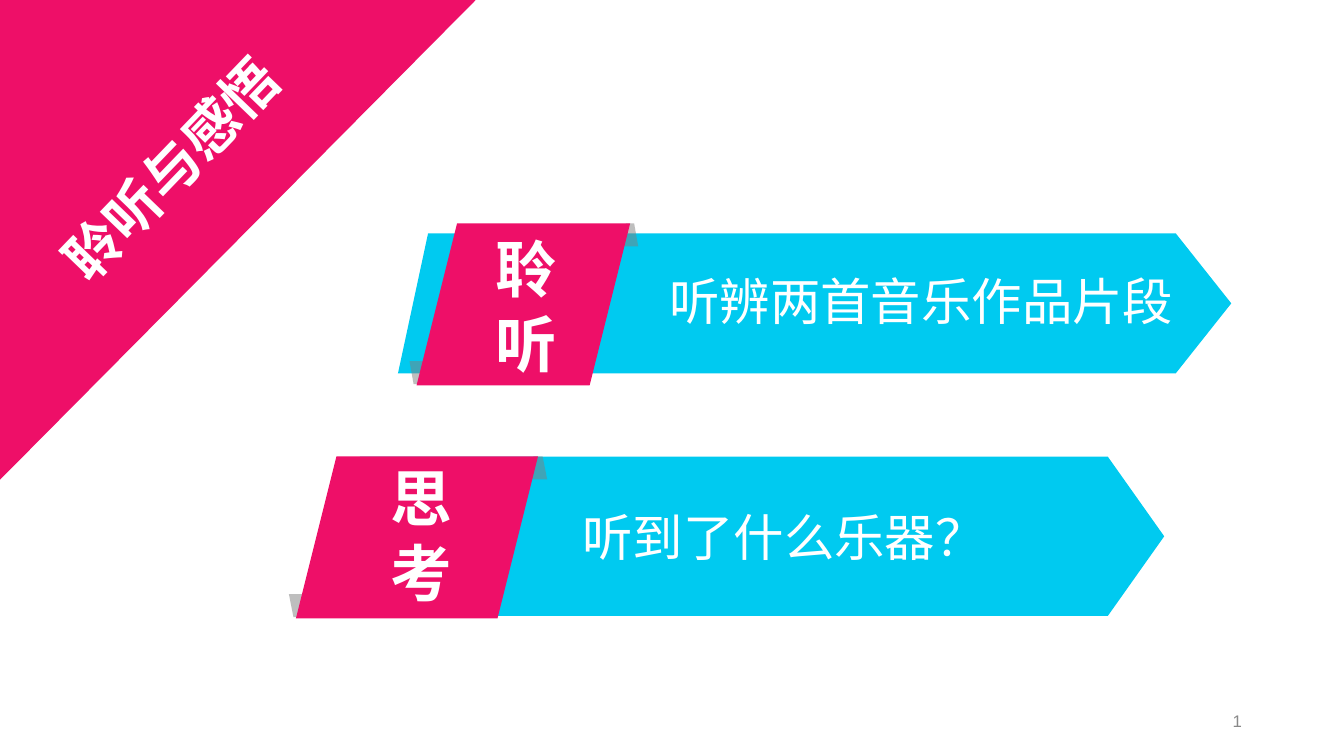
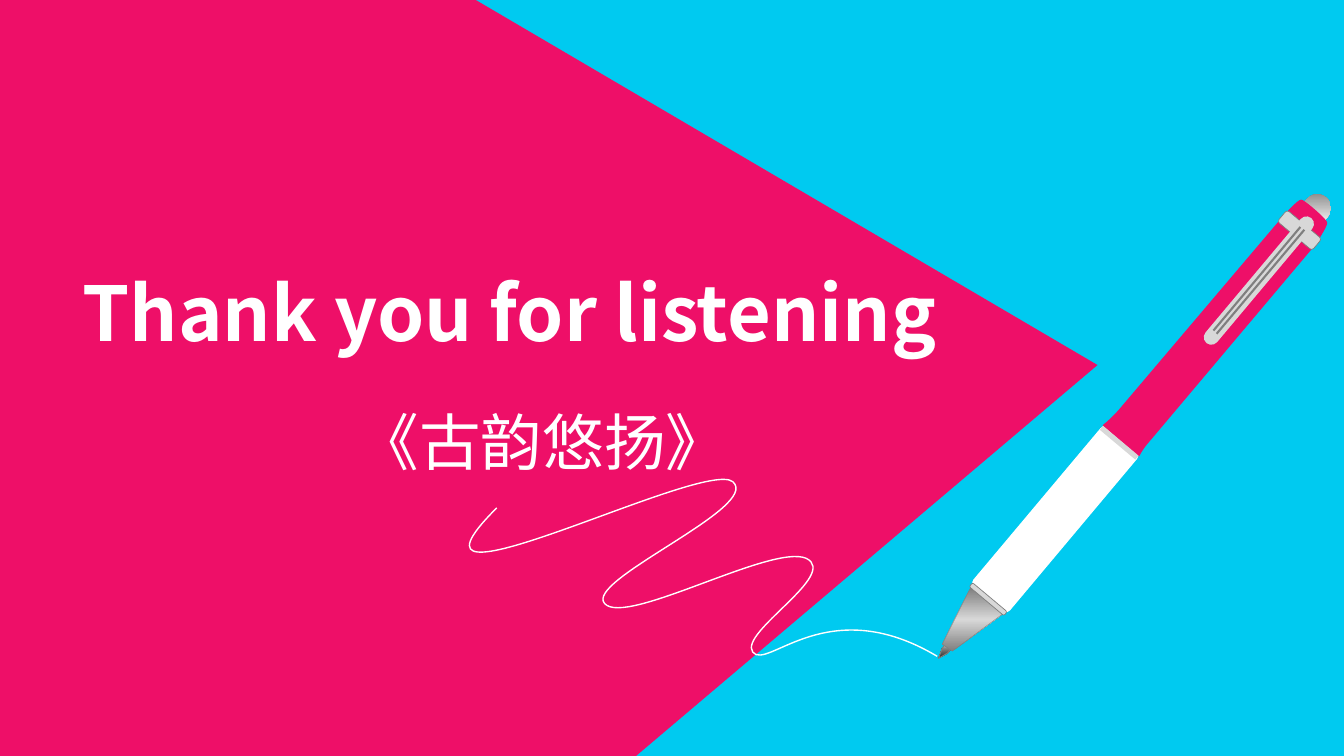
from dataclasses import dataclass

from lxml import etree
from pptx import Presentation
from pptx.dml.color import RGBColor
from pptx.enum.shapes import MSO_CONNECTOR, MSO_SHAPE
from pptx.enum.text import MSO_ANCHOR, MSO_AUTO_SIZE, PP_ALIGN
from pptx.oxml.ns import qn
from pptx.util import Cm, Pt

PINK, CYAN, WHITE = "EE0F68", "00CAF0", "FFFFFF"
GREY, LIGHT_GREY, NUMBER_GREY, BLACK = "7F7F7F", "D8D8D8", "898989", "262626"
CJK_FONT, LATIN_FONT = "Noto Sans CJK SC", "Arial"
WIDTH, HEIGHT = 33.87, 19.05
PEN_ANGLE = 310

Point = tuple[float, float]
Segment = tuple[Point, ...]  # one point: straight; three points: cubic curve
Stop = tuple[int, str]


@dataclass(frozen=True)
class Box:
    left: float
    top: float
    width: float
    height: float

    @property
    def right(self) -> float:
        return self.left + self.width

    @property
    def bottom(self) -> float:
        return self.top + self.height

    def lengths(self) -> tuple:
        return Cm(self.left), Cm(self.top), Cm(self.width), Cm(self.height)


@dataclass(frozen=True)
class Ribbon:
    label: str
    task: str
    tab: Box
    band: Box
    point_length: float
    fold_width: float
    label_box: Box
    task_box: Box


@dataclass(frozen=True)
class PenPart:
    box: Box
    rounding: float = 0
    fill: str = LIGHT_GREY
    line: str | None = None
    line_width: float = 0.5


RIBBONS = (
    Ribbon("聆听", "听辨两首音乐作品片段", Box(10.5, 5.63, 5.38, 4.08),
           Box(10.03, 5.88, 21, 3.53), 1.4, 0.41,
           Box(11.48, 5.67, 3.58, 4.01), Box(16.62, 6.67, 13.69, 1.8)),
    Ribbon("思考", "听到了什么乐器？", Box(7.46, 11.5, 6.1, 4.08),
           Box(8.31, 11.51, 21.03, 4.01), 1.42, 0.46,
           Box(8.84, 11.45, 3.58, 4.01), Box(14.43, 12.61, 16.1, 1.8)),
)

SCRIBBLE_START = (12.52, 12.8)
SCRIBBLE = (
    ((9.42, 15.88), (17.75, 11.53), (18.47, 12.14)),
    ((19.2, 12.78), (14.71, 14.63), (15.24, 15.21)),
    ((15.77, 15.8), (19.46, 13.69), (20.32, 14.07)),
    ((21.16, 14.48), (18.62, 15.93), (18.97, 16.43)),
    ((19.33, 16.92), (20.85, 14.88), (23.62, 16.54)),
)
BARREL_START = (32.79, 5.05)
BARREL = (
    ((32.84, 5.03), (33.43, 5.54), (33.43, 5.61)),
    ((33.45, 5.66), (33.25, 5.99), (33.1, 6.2)),
    ((29.01, 11.05),),
    ((28.83, 11.25), (28.75, 11.38), (28.7, 11.48)),
    ((27.81, 10.72),),
    ((27.94, 10.62), (28.04, 10.52), (28.19, 10.36)),
    ((32.28, 5.54),),
    ((32.46, 5.33), (32.72, 5.05), BARREL_START),
)
TIP = ((23.75, 16.33), (24.08, 15.93), (24.21, 16.05), (23.88, 16.46), (23.65, 16.59))
NIB = ((24.46, 14.81), (25.27, 15.47), (24, 16.41), (23.75, 16.23))

BUTTON = PenPart(Box(31.85, 5.36, 1.91, 0.69), 0.5)
GRIP = PenPart(Box(23.98, 12.5, 5.23, 1.17), 0.11, WHITE, WHITE, 1)
FITTINGS = (
    PenPart(Box(28.14, 10.57, 0.13, 1.17)),
    PenPart(Box(24.84, 14.53, 0.13, 1.14), 0.37, line=GREY),
    PenPart(Box(32.56, 5.23, 0.38, 1.14), 0.2, line=GREY),
    PenPart(Box(29.67, 6.88, 4.11, 0.38), 0.5),
)
CLIP_GROOVES = (((30.66, 8.41), (32.87, 5.79)), ((30.58, 8.33), (32.77, 5.72)))


def rgb(value: str) -> RGBColor:
    return RGBColor.from_string(value)


def paint(shape, fill: str | None, line: str | None = None,
          line_width: float = 1, opacity: int = 100) -> None:
    shape.shadow.inherit = False
    if fill:
        shape.fill.solid()
        shape.fill.fore_color.rgb = rgb(fill)
        if opacity < 100:
            shade = shape.fill._xPr.find(f"{qn('a:solidFill')}/{qn('a:srgbClr')}")
            etree.SubElement(shade, qn("a:alpha"), val=str(opacity * 1000))
    else:
        shape.fill.background()
    if line:
        shape.line.color.rgb = rgb(line)
        shape.line.width = Pt(line_width)
    else:
        shape.line.fill.background()


def paint_gradient(shape, stops: tuple[Stop, ...], angle: int = 90) -> None:
    """Replace the fill by a gradient through all stops; 90 runs downwards."""
    shape.fill.gradient()
    gradient = shape.fill._xPr.find(qn("a:gradFill"))
    for child in list(gradient):
        gradient.remove(child)
    stop_list = etree.SubElement(gradient, qn("a:gsLst"))
    for percent, color in stops:
        stop = etree.SubElement(stop_list, qn("a:gs"), pos=str(percent * 1000))
        etree.SubElement(stop, qn("a:srgbClr"), val=color)
    etree.SubElement(gradient, qn("a:lin"), ang=str(angle * 60000), scaled="0")


def add_preset(slide, kind: MSO_SHAPE, box: Box, fill: str, rotation: float = 0,
               adjustment: float | None = None, **style):
    shape = slide.shapes.add_shape(kind, *box.lengths())
    shape.rotation = rotation
    if adjustment is not None:
        shape.adjustments[0] = adjustment
    paint(shape, fill, **style)
    return shape


def bezier(start: Point, curve: Segment, steps: int = 24) -> list[Point]:
    corners = (start, *curve)
    points = []
    for step in range(1, steps + 1):
        t = step / steps
        weights = ((1 - t) ** 3, 3 * t * (1 - t) ** 2, 3 * t * t * (1 - t), t ** 3)
        points.append(tuple(sum(w * c[axis] for w, c in zip(weights, corners))
                            for axis in (0, 1)))
    return points


def add_outline(slide, points, fill: str | None = None, closed: bool = True, **style):
    start, *rest = [(Cm(x), Cm(y)) for x, y in points]
    builder = slide.shapes.build_freeform(*start)
    builder.add_line_segments(rest, close=closed)
    shape = builder.convert_to_shape()
    paint(shape, fill, **style)
    return shape


def add_curve(slide, start: Point, segments: tuple[Segment, ...], closed: bool, **style):
    """Size a freeform by points along the curve, then give it true cubic segments."""
    points = [start]
    for segment in segments:
        points += segment if len(segment) == 1 else bezier(points[-1], segment)
    shape = add_outline(slide, points, closed=closed, **style)
    outline = shape._element.spPr.find(f".//{qn('a:path')}")
    for line in outline.findall(qn("a:lnTo")) + outline.findall(qn("a:close")):
        outline.remove(line)
    for segment in segments:
        tag = "a:lnTo" if len(segment) == 1 else "a:cubicBezTo"
        step = etree.SubElement(outline, qn(tag))
        for x, y in segment:
            etree.SubElement(step, qn("a:pt"), x=str(Cm(x) - shape.left),
                             y=str(Cm(y) - shape.top))
    if closed:
        etree.SubElement(outline, qn("a:close"))
    return shape


def write(shape, text: str, *, size: float, color: str = WHITE, font: str = CJK_FONT,
          bold: bool = False, align: PP_ALIGN = PP_ALIGN.LEFT,
          line_spacing: float | None = None):
    frame = shape.text_frame
    frame.word_wrap = True
    frame.auto_size = MSO_AUTO_SIZE.NONE
    frame.vertical_anchor = MSO_ANCHOR.MIDDLE
    paragraph = frame.paragraphs[0]
    paragraph.alignment = align
    paragraph.space_before = Pt(0)
    if line_spacing:
        paragraph.line_spacing = Pt(line_spacing)
    run = paragraph.add_run()
    run.text = text
    run.font.size, run.font.bold, run.font.name = Pt(size), bold, font
    run.font.color.rgb = rgb(color)
    etree.SubElement(run._r.get_or_add_rPr(), qn("a:ea"), typeface=font)
    return run


def add_text(slide, box: Box, text: str, **style):
    return write(slide.shapes.add_textbox(*box.lengths()), text, **style)


def fill_placeholder(placeholder, box: Box, text: str, rotation: float = 0, **style) -> None:
    """Place and fill a placeholder in front of what is already drawn."""
    placeholder.left, placeholder.top, placeholder.width, placeholder.height = box.lengths()
    placeholder.rotation = rotation
    write(placeholder, text, **style)
    tree = placeholder._element.getparent()
    tree.append(placeholder._element)


def add_slide_number(slide, number: int) -> None:
    run = add_text(slide, Box(23.93, 17.65, 7.62, 1.02), str(number), size=12,
                   color=NUMBER_GREY, font=LATIN_FONT, align=PP_ALIGN.RIGHT)
    paragraph = run._r.getparent()
    field = etree.SubElement(paragraph, qn("a:fld"), type="slidenum",
                             id="{B6F15528-21DE-4FAA-801E-634DDDAF4B2B}")
    for child in list(run._r):
        field.append(child)
    paragraph.remove(run._r)


def add_ribbon(slide, ribbon: Ribbon) -> None:
    tab, band = ribbon.tab, ribbon.band
    shoulder = band.right - ribbon.point_length
    add_outline(slide, (
        (band.left + 0.76, band.top), (shoulder, band.top),
        (band.right, band.top + band.height / 2),
        (shoulder, band.bottom), (band.left, band.bottom)), CYAN)
    fold_height = 0.58
    folds = ((tab.right - ribbon.fold_width / 2, tab.top, 0),
             (tab.left - 0.18, tab.bottom - fold_height - 0.03, 180))
    for left, top, rotation in folds:
        add_preset(slide, MSO_SHAPE.TRAPEZOID, Box(left, top, ribbon.fold_width, fold_height),
                   GREY, rotation, 0.25, opacity=50)
    add_preset(slide, MSO_SHAPE.PARALLELOGRAM, tab, PINK, adjustment=0.25)
    add_text(slide, ribbon.task_box, ribbon.task, size=36)
    add_text(slide, ribbon.label_box, ribbon.label, size=44, bold=True,
             font=LATIN_FONT, align=PP_ALIGN.CENTER, line_spacing=53.5)


def add_pen_part(slide, part: PenPart):
    kind = MSO_SHAPE.ROUNDED_RECTANGLE if part.rounding else MSO_SHAPE.RECTANGLE
    return add_preset(slide, kind, part.box, part.fill, PEN_ANGLE, part.rounding or None,
                      line=part.line, line_width=part.line_width)


def add_groove(slide, start: Point, end: Point) -> None:
    groove = slide.shapes.add_connector(
        MSO_CONNECTOR.STRAIGHT, *(Cm(value) for value in (*start, *end)))
    groove.line.color.rgb = rgb(GREY)
    groove.line.width = Pt(1.5)
    etree.SubElement(groove._element.spPr, qn("a:effectLst"))


def add_pen(slide) -> None:
    paint_gradient(add_pen_part(slide, BUTTON), ((0, GREY), (50, WHITE), (100, GREY)), 140)
    tip = add_outline(slide, TIP, GREY, line=GREY, line_width=0.75)
    paint_gradient(tip, ((0, BLACK), (36, GREY), (65, WHITE), (80, WHITE), (100, BLACK)), 270)
    add_pen_part(slide, GRIP)
    nib = add_outline(slide, NIB, GREY, line=GREY, line_width=0.25)
    paint_gradient(nib, ((0, GREY), (50, LIGHT_GREY), (100, GREY)))
    add_curve(slide, BARREL_START, BARREL, closed=True, fill=PINK, line=PINK)
    for fitting in FITTINGS:
        add_pen_part(slide, fitting)
    for start, end in CLIP_GROOVES:
        add_groove(slide, start, end)


def build_listening_slide(deck) -> None:
    slide = deck.slides.add_slide(deck.slide_layouts[5])
    add_preset(slide, MSO_SHAPE.RIGHT_TRIANGLE, Box(-0.05, 0.05, 12.09, 11.99), PINK, 90)
    fill_placeholder(slide.shapes.title, Box(-1.09, 3.26, 10.77, 1.96), "聆听与感悟",
                     313.8, size=40, bold=True, align=PP_ALIGN.CENTER)
    for ribbon in RIBBONS:
        add_ribbon(slide, ribbon)
    add_slide_number(slide, 1)


def build_closing_slide(deck) -> None:
    slide = deck.slides.add_slide(deck.slide_layouts[0])
    add_preset(slide, MSO_SHAPE.RECTANGLE, Box(0, 0, WIDTH, HEIGHT), CYAN)
    add_outline(slide, ((0, 0), (11.99, 0), (27.66, 9.2), (16.03, HEIGHT), (0, HEIGHT)), PINK)
    fill_placeholder(slide.shapes.title, Box(1.83, 6.55, 23.09, 2.57),
                     "Thank you for listening", size=54, bold=True)
    fill_placeholder(slide.placeholders[1], Box(8.76, 10, 19.02, 2.24),
                     "《古韵悠扬》", size=44)
    add_curve(slide, SCRIBBLE_START, SCRIBBLE, closed=False, line=WHITE)
    add_pen(slide)


def main() -> None:
    deck = Presentation()
    deck.slide_width, deck.slide_height = Cm(WIDTH), Cm(HEIGHT)
    build_listening_slide(deck)
    build_closing_slide(deck)
    deck.save("out.pptx")


if __name__ == "__main__":
    main()
